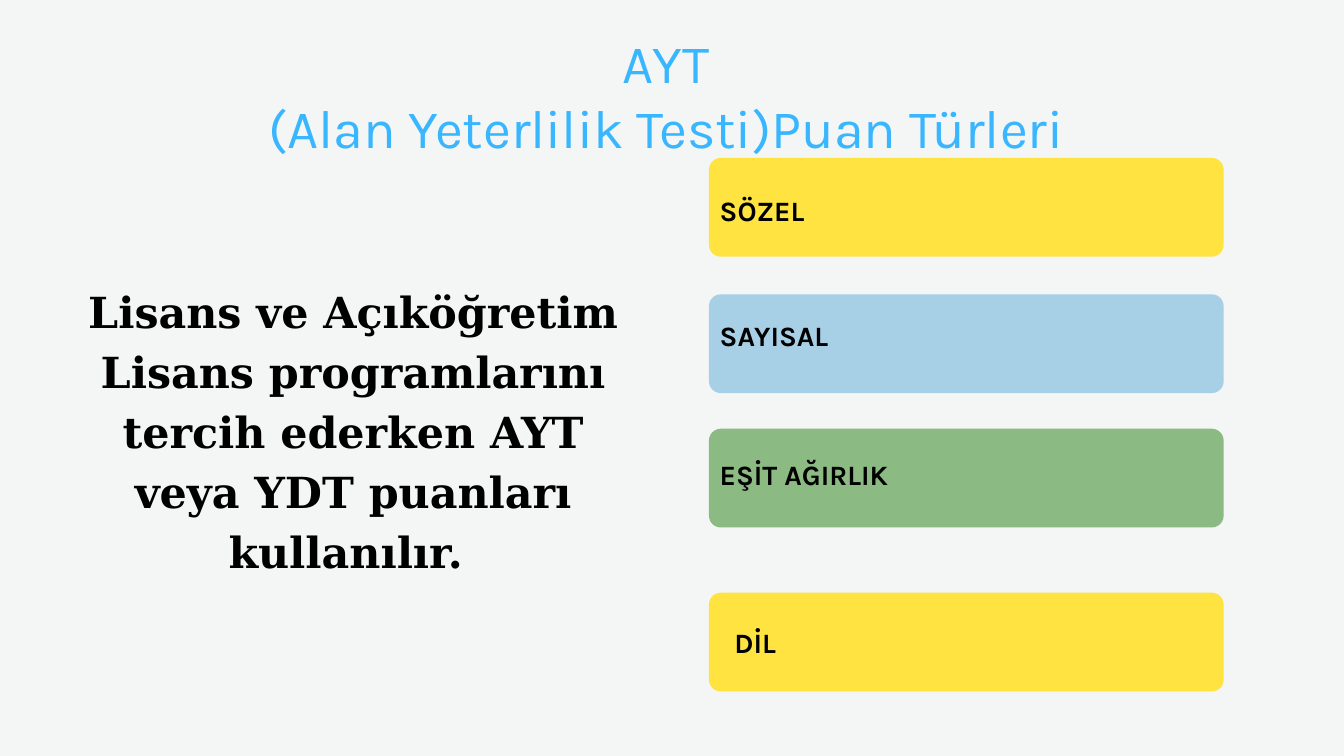
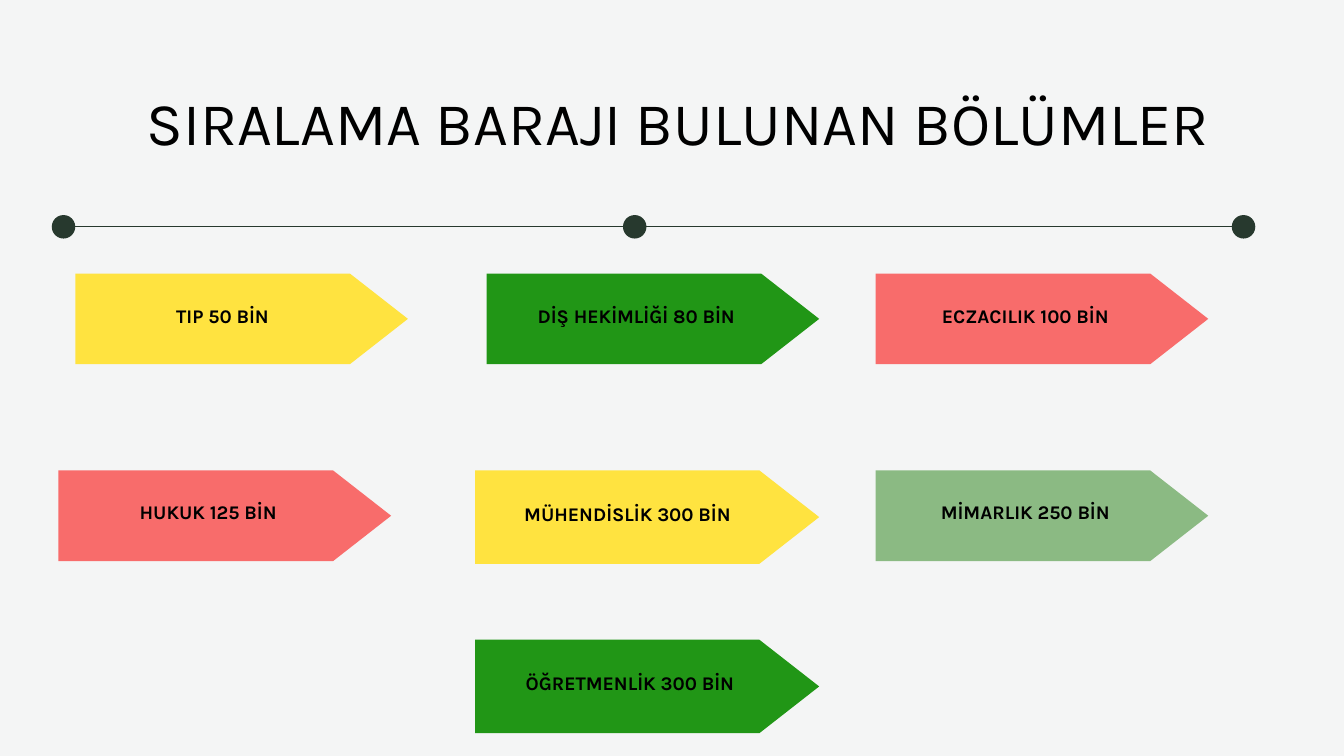
import pptx
import pptx.util
import pptx.dml.color
import pptx.enum.shapes
import pptx.enum.text
import lxml.etree
from pptx.oxml.ns import qn

Inches = pptx.util.Inches
Pt = pptx.util.Pt
Shapes = pptx.enum.shapes.MSO_SHAPE
Align = pptx.enum.text.PP_ALIGN

COLORS = {
    "paper": "F4F5F5",
    "ink": "000000",
    "sky": "38B6FF",
    "yellow": "FFE340",
    "blue": "A7CFE6",
    "sage": "8BBA83",
    "green": "219616",
    "coral": "F86C6B",
    "forest": "27392E",
}
SANS = "Karla"
SERIF = "DejaVu Serif"

SCORE_TYPES = [
    ("SÖZEL", "yellow", 2.35, 0.16, 0.49),
    ("SAYISAL", "blue", 4.38, 0.16, 0.32),
    ("EŞİT AĞIRLIK", "sage", 6.38, 0.16, 0.38),
    ("DİL", "yellow", 8.82, 0.38, 0.44),
]
SMALL_ARROW = (4.95, 1.35)
LARGE_ARROW = (5.12, 1.39)
DEPARTMENTS = [
    ("TIP 50 BİN ", "yellow", 1.12, 4.07, SMALL_ARROW),
    ("DİŞ HEKİMLİĞİ 80 BİN", "green", 7.24, 4.07, SMALL_ARROW),
    ("ECZACILIK 100 BİN", "coral", 13.03, 4.07, SMALL_ARROW),
    ("HUKUK 125 BİN", "coral", 0.87, 7, SMALL_ARROW),
    ("MÜHENDİSLİK 300 BİN ", "yellow", 7.07, 7, LARGE_ARROW),
    ("MİMARLIK 250 BİN", "sage", 13.03, 7, SMALL_ARROW),
    ("ÖĞRETMENLİK 300 BİN", "green", 7.07, 9.52, LARGE_ARROW),
]


def rgb(name):
    """Return the palette colour of the given name."""
    return pptx.dml.color.RGBColor.from_string(COLORS[name])


def add_slide(deck):
    """Add a blank slide with the shared background."""
    slide = deck.slides.add_slide(deck.slide_layouts[6])
    slide.background.fill.solid()
    slide.background.fill.fore_color.rgb = rgb("paper")
    return slide


def add_filled(shapes, preset, box, color):
    """Add a flat preset shape without an outline."""
    filled = shapes.add_shape(preset, *map(Inches, box))
    filled.shadow.inherit = False
    filled.fill.solid()
    filled.fill.fore_color.rgb = rgb(color)
    filled.line.fill.background()
    return filled


def add_text(shapes, box, text, size, leading, align=Align.CENTER, font=SANS,
             color="ink", bold=False, inset=0):
    """Add a wrapped text box, one paragraph for each line of text."""
    frame = shapes.add_textbox(*map(Inches, box)).text_frame
    frame.word_wrap = True
    frame.margin_left = frame.margin_right = Inches(inset)
    frame.margin_top = frame.margin_bottom = Inches(inset)
    frame.text = text
    for paragraph in frame.paragraphs:
        paragraph.alignment = align
        paragraph.line_spacing = Pt(leading)
        for run in paragraph.runs:
            run.font.name = font
            run.font.size = Pt(size)
            run.font.bold = bold
            run.font.color.rgb = rgb(color)
    return frame


def add_title(slide, box, text, size, color="ink"):
    """Add a centred slide title with 1.2 line spacing."""
    add_text(slide.shapes, box, text, size, size * 1.2, color=color)


def add_score_bar(slide, box, label, color, indent, drop):
    """Add a rounded bar with its score type."""
    left, top, width, height = box
    bar = add_filled(slide.shapes, Shapes.ROUNDED_RECTANGLE, box, color)
    bar.adjustments[0] = 0.12
    add_text(slide.shapes, (left + indent, top + drop, 6.54, 0.54), label,
             30, 39, align=Align.LEFT, bold=True)


def add_timeline(slide, box):
    """Add a horizontal line with a dot at its start, middle and end."""
    left, top, width, dot = box
    middle = top + dot / 2
    rail = slide.shapes.add_connector(
        pptx.enum.shapes.MSO_CONNECTOR.STRAIGHT,
        Inches(left + dot / 2), Inches(middle),
        Inches(left + width - dot / 2), Inches(middle))
    rail.line.color.rgb = rgb("forest")
    rail.line.width = Pt(1.5)
    lxml.etree.SubElement(rail._element.spPr, qn("a:effectLst"))
    for offset in (0, 8.5, width - dot):
        add_filled(slide.shapes, Shapes.OVAL, (left + offset, top, dot, dot), "forest")


def add_department(slide, box, label, color):
    """Add a grouped arrow and label for one department."""
    left, top, width, height = box
    group = slide.shapes.add_group_shape().shapes
    arrow = add_filled(group, Shapes.PENTAGON, box, color)
    arrow.adjustments[0] = 0.64
    lift = height * 0.12
    frame = add_text(group, (left, top - lift, width * 0.9, height + lift), label,
                     20.7, 29, bold=True, inset=0.06)
    frame.vertical_anchor = pptx.enum.text.MSO_ANCHOR.MIDDLE


def build_score_types(deck):
    """Build the slide on the AYT score types."""
    slide = add_slide(deck)
    for label, color, top, indent, drop in SCORE_TYPES:
        add_score_bar(slide, (10.55, top, 7.66, 1.47), label, color, indent, drop)
    add_title(slide, (0.3, 0.44, 19.22, 1.92),
              "AYT\n(Alan Yeterlilik Testi)Puan Türleri", 58, "sky")
    add_text(slide.shapes, (0.95, 4.13, 8.61, 4.4),
             "Lisans ve Açıköğretim Lisans programlarını tercih ederken "
             "AYT veya YDT puanları kullanılır. ",
             45.9, 64.2, font=SERIF, bold=True)


def build_departments(deck):
    """Build the slide on departments with a ranking threshold."""
    slide = add_slide(deck)
    add_timeline(slide, (0.77, 3.2, 17.91, 0.35))
    add_title(slide, (0.19, 1.26, 19.81, 1.09), "SIRALAMA BARAJI BULUNAN BÖLÜMLER", 65)
    for label, color, left, top, size in DEPARTMENTS:
        add_department(slide, (left, top, *size), label, color)


def main():
    """Build and save the deck."""
    deck = pptx.Presentation()
    deck.slide_width = Inches(20)
    deck.slide_height = Inches(11.25)
    build_score_types(deck)
    build_departments(deck)
    deck.save("out.pptx")


if __name__ == "__main__":
    main()
